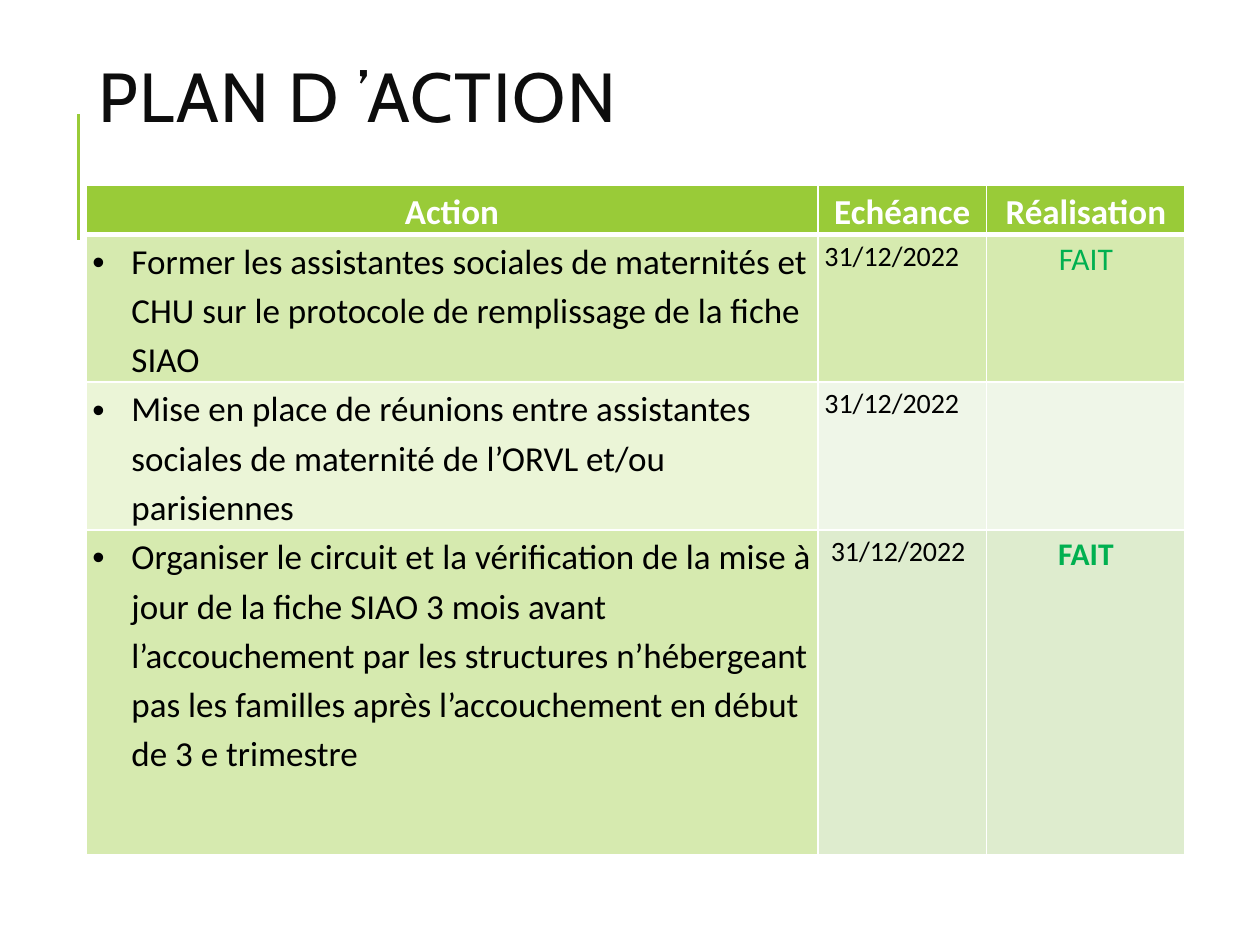
import pptx
import pptx.dml.color
import pptx.enum.shapes
import pptx.enum.text
import pptx.oxml
import pptx.oxml.ns
import pptx.util
from pptx.util import Cm, Pt

RGBColor = pptx.dml.color.RGBColor
PP_ALIGN = pptx.enum.text.PP_ALIGN

WHITE = RGBColor(0xFF, 0xFF, 0xFF)
BLACK = RGBColor(0, 0, 0)
TITLE_INK = RGBColor(0x0D, 0x0D, 0x0D)
ACCENT = RGBColor(0x99, 0xCB, 0x38)
DONE_GREEN = RGBColor(0x00, 0xB0, 0x50)
BAND_DARK = RGBColor(0xD6, 0xEA, 0xAF)
BAND_LIGHT = RGBColor(0xEB, 0xF5, 0xD7)
GREY_LIGHT = RGBColor(0xEF, 0xF6, 0xE8)
GREY_DARK = RGBColor(0xDE, 0xEC, 0xCE)
NAMESPACE = pptx.oxml.ns.nsdecls("a")


def add_borders(cell, bottom_points):
    """Give the cell white edges, 1 pt except at the bottom."""
    properties = cell._tc.get_or_add_tcPr()
    for side, points in (("L", 1), ("R", 1), ("T", 1), ("B", bottom_points)):
        properties.append(pptx.oxml.parse_xml(
            f'<a:ln{side} {NAMESPACE} w="{Pt(points)}"><a:solidFill>'
            f'<a:srgbClr val="{WHITE}"/></a:solidFill></a:ln{side}>'))


def fill_cell(cell, text, size, color, bold, align, fill, bottom_points):
    add_borders(cell, bottom_points)
    cell.fill.solid()
    cell.fill.fore_color.rgb = fill
    cell.margin_left = cell.margin_right = Cm(0.13)
    cell.margin_top = cell.margin_bottom = 0
    para = cell.text_frame.paragraphs[0]
    para.text = text
    para.alignment = align
    para.line_spacing = 1.15
    para.space_before = Pt(3)
    for span in para.runs:
        span.font.name = "Calibri"
        span.font.size = Pt(size)
        span.font.bold = bold
        span.font.color.rgb = color
    return para


deck = pptx.Presentation()
deck.slide_width = Cm(25.4)
deck.slide_height = Cm(19.05)
page = deck.slides.add_slide(deck.slide_layouts[5])

# Accent line beside the title
accent_line = page.shapes.add_connector(
    pptx.enum.shapes.MSO_CONNECTOR.STRAIGHT, Cm(1.58), Cm(4.83), Cm(1.58), Cm(2.29))
accent_line.line.color.rgb = ACCENT
accent_line.line.width = Pt(1.5)
accent_line._element.spPr.append(pptx.oxml.parse_xml(f"<a:effectLst {NAMESPACE}/>"))

# Title
title = page.shapes.title
title.left, title.top, title.width, title.height = Cm(1.73), Cm(1.32), Cm(21.9), Cm(1.5)
frame = title.text_frame
frame.text = "PLAN D ’ACTION"
frame.word_wrap = True
frame.auto_size = pptx.enum.text.MSO_AUTO_SIZE.NONE
frame.vertical_anchor = pptx.enum.text.MSO_ANCHOR.MIDDLE
para = frame.paragraphs[0]
para.alignment = PP_ALIGN.LEFT
para.line_spacing = 0.8
span = para.runs[0]
span.font.name = "Cabin"
span.font.size = Pt(39.6)
span.font.color.rgb = TITLE_INK
span.font._element.set("spc", "100")

# Action table
column_widths = (14.76, 3.4, 4.0)
row_heights = (0.99, 2.97, 2.97, 6.55)
headings = ("Action", "Echéance", "Réalisation")
# action, due date, status, status in bold, action fill, fill of the other cells
actions = (
    ("Former les assistantes sociales de maternités et CHU sur le protocole de "
     "remplissage de la fiche SIAO",
     "31/12/2022", "FAIT", False, BAND_DARK, BAND_DARK),
    ("Mise en place de réunions entre assistantes sociales de maternité de l’ORVL "
     "et/ou parisiennes",
     "31/12/2022", "", False, BAND_LIGHT, GREY_LIGHT),
    ("Organiser le circuit et la vérification de la mise à jour de la fiche SIAO "
     "3 mois avant l’accouchement par les structures n’hébergeant pas les familles "
     "après l’accouchement en début de 3 e trimestre",
     " 31/12/2022", "FAIT", True, BAND_DARK, GREY_DARK),
)

table = page.shapes.add_table(
    len(row_heights), len(column_widths), Cm(1.73), Cm(3.73),
    Cm(sum(column_widths)), Cm(sum(row_heights))).table
for column, width in zip(table.columns, column_widths):
    column.width = Cm(width)
for row, height in zip(table.rows, row_heights):
    row.height = Cm(height)

for index, heading in enumerate(headings):
    fill_cell(table.cell(0, index), heading, 20, WHITE, True, PP_ALIGN.CENTER, ACCENT, 3)

for index, (action, due, status, bold, action_fill, side_fill) in enumerate(actions, 1):
    para = fill_cell(table.cell(index, 0), action, 20, BLACK, False,
                     PP_ALIGN.LEFT, action_fill, 1)
    properties = para._p.get_or_add_pPr()
    properties.set("marL", str(Cm(0.79)))
    properties.set("indent", str(-Cm(0.79)))
    properties.append(pptx.oxml.parse_xml(f'<a:buFont {NAMESPACE} typeface="Arial"/>'))
    properties.append(pptx.oxml.parse_xml(f'<a:buChar {NAMESPACE} char="•"/>'))
    fill_cell(table.cell(index, 1), due, 16, BLACK, False, PP_ALIGN.LEFT, side_fill, 1)
    fill_cell(table.cell(index, 2), status, 18, DONE_GREEN, bold,
              PP_ALIGN.CENTER, side_fill, 1)

deck.save("out.pptx")
